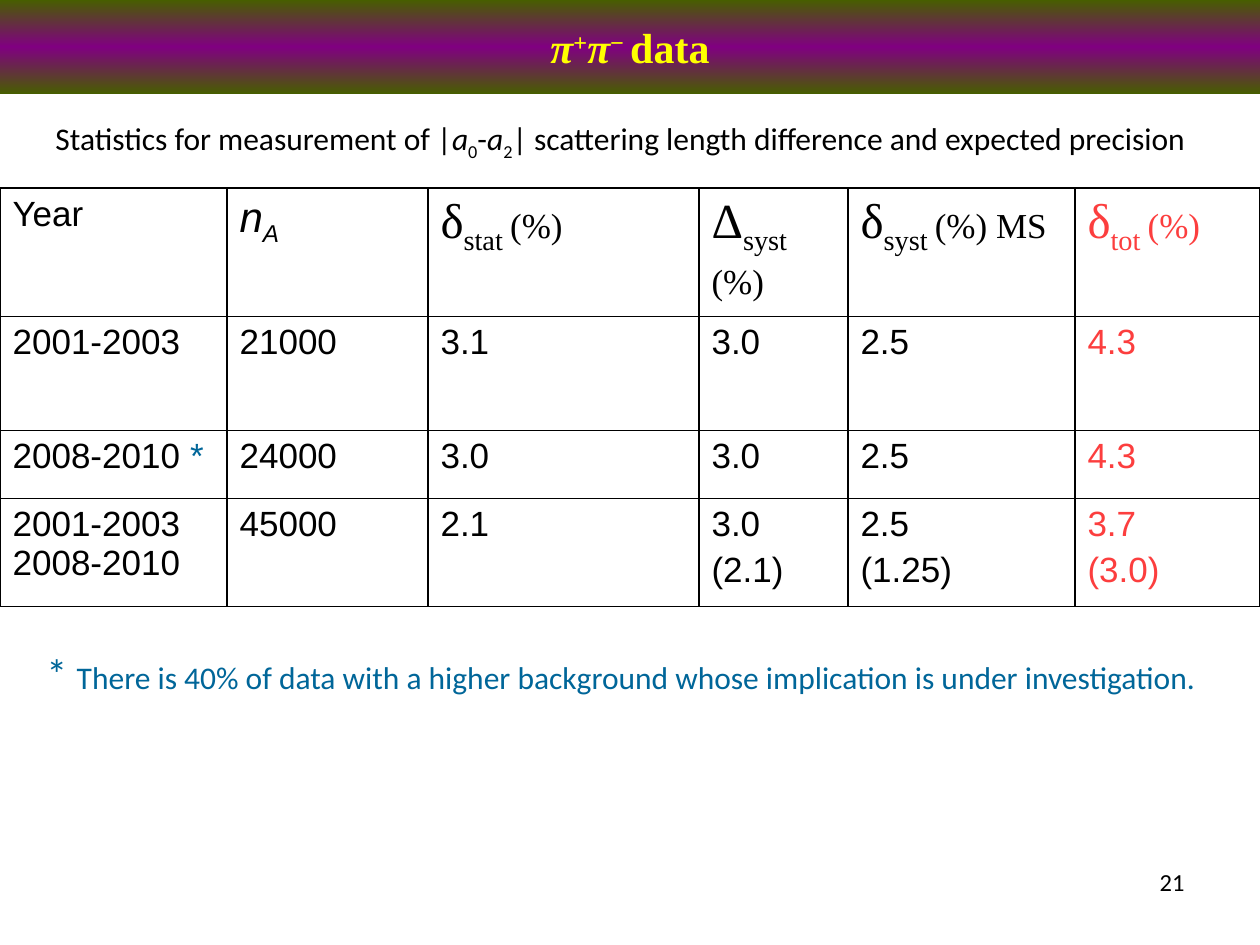
from copy import deepcopy
from pptx import Presentation
from pptx.dml.color import RGBColor
from pptx.enum.text import MSO_ANCHOR, MSO_AUTO_SIZE, PP_ALIGN
from pptx.oxml import parse_xml
from pptx.oxml.ns import nsdecls, qn
from pptx.util import Inches, Pt

LEFT, CENTER, RIGHT = PP_ALIGN.LEFT, PP_ALIGN.CENTER, PP_ALIGN.RIGHT
MIDDLE, FIXED = MSO_ANCHOR.MIDDLE, MSO_AUTO_SIZE.NONE
SCALE = Inches(1) / 126
SANS, SERIF, BODY = "Arial", "Times New Roman", "Calibri"
BLACK, RED, BLUE, YELLOW = "000000", "FC3E3E", "006699", "FFFF00"
GREEN, PURPLE = "475E00", "800080"
SUB, SUP = {"base": -25}, {"base": 30}
ITALIC = {"italic": True}
EDGES = ("lnL", "lnR", "lnT", "lnB")


def px(size):
    return round(size * SCALE)


def color(code):
    return RGBColor.from_string(code)


class Deck:
    def __init__(self, width, height):
        self.file = Presentation()
        self.file.slide_width = px(width)
        self.file.slide_height = px(height)
        self.slide = self.file.slides.add_slide(self.file.slide_layouts[5])

    def fill_text(self, frame, lines, align=LEFT, **style):
        for index, line in enumerate(lines):
            para = frame.paragraphs[0] if index == 0 else frame.add_paragraph()
            para.alignment = align
            para.space_before = Pt(4 if index else 0)
            for text, change in line:
                self.add_run(para, text, **{**style, **change})

    def add_run(self, para, text, size, font, tint=BLACK, bold=False,
                italic=False, base=0):
        run = para.add_run()
        run.text = text
        run.font.size, run.font.name = Pt(size), font
        run.font.bold, run.font.italic = bold, italic
        run.font.color.rgb = color(tint)
        if base:
            run.font._element.set("baseline", str(base * 1000))

    def title(self, box, line, tints, **style):
        shape = self.slide.shapes.title
        shape.left, shape.top, shape.width, shape.height = map(px, box)
        shape.fill.gradient()
        shape.fill.gradient_angle = 90
        stops = shape._element.spPr.find(".//" + qn("a:gsLst"))
        stops.append(deepcopy(stops[0]))
        for index, stop in enumerate(shape.fill.gradient_stops):
            stop.position = index / 2
            stop.color.rgb = color(tints[index])
        frame = shape.text_frame
        frame.auto_size, frame.vertical_anchor = FIXED, MIDDLE
        self.fill_text(frame, [line], CENTER, **style)

    def text(self, box, line, align=LEFT, wrap=True, **style):
        frame = self.slide.shapes.add_textbox(*map(px, box)).text_frame
        frame.word_wrap = wrap
        self.fill_text(frame, [line], align, **style)

    def border(self, cell):
        props = cell._tc.get_or_add_tcPr()
        for index, edge in enumerate(EDGES):
            props.insert(index, parse_xml(
                f'<a:{edge} {nsdecls("a")} w="12700"><a:solidFill>'
                f'<a:srgbClr val="{BLACK}"/></a:solidFill></a:{edge}>'))

    def table(self, left, top, widths, heights, rows):
        box = (left, top, sum(widths), sum(heights))
        table = self.slide.shapes.add_table(
            len(rows), len(widths), *map(px, box)).table
        table.first_row = table.horz_banding = False
        for column, width in zip(table.columns, widths):
            column.width = px(width)
        for y, (height, cells) in enumerate(zip(heights, rows)):
            table.rows[y].height = px(height)
            for x, lines in enumerate(cells):
                cell = table.cell(y, x)
                cell.fill.background()
                self.border(cell)
                tint = RED if x == len(widths) - 1 else BLACK
                self.fill_text(cell.text_frame, lines, size=20, font=SANS, tint=tint)


def symbol(sign, label, tail=""):
    big = {"size": 28, "font": SERIF}
    line = [(sign, big), (label, {**big, **SUB})]
    return line + [(tail, {"font": SERIF})] if tail else line


def plain(*lines):
    return [[(line, {})] for line in lines]


def main():
    deck = Deck(1260, 945)
    deck.text((903, 861, 294, 66), [("21", {})], RIGHT, size=14, font=BODY)
    deck.title((0, 0, 1260, 94),
               [("π", ITALIC), ("+", SUP), ("π", ITALIC), ("− ", SUP), ("data", {})],
               (GREEN, PURPLE, GREEN), size=24, font=SERIF, tint=YELLOW, bold=True)
    deck.text((25, 113, 1191, 50),
              [("Statistics for measurement of |", {}), ("a", ITALIC), ("0", SUB),
               ("-", {}), ("a", ITALIC), ("2", SUB),
               ("| scattering length difference and expected precision", {})],
              CENTER, size=18, font=BODY)
    name = {"size": 24, "italic": True}
    head = [plain("Year"),
            [[("n", name), ("A", {**name, **SUB})]],
            [symbol("δ", "stat ", "(%)")],
            [symbol("Δ", "syst"), [("(%)", {"font": SERIF})]],
            [symbol("δ", "syst ", "(%) MS")],
            [symbol("δ", "tot ", "(%)")]]
    first = [plain(value) for value in
             ("2001-2003", "21000", "3.1", "3.0", "2.5", "4.3")]
    second = [[[("2008-2010 ", {}), ("*", {"tint": BLUE})]]] + [
        plain(value) for value in ("24000", "3.0", "3.0", "2.5", "4.3")]
    total = [plain("2001-2003 2008-2010"), plain("45000"), plain("2.1"),
             plain("3.0", "(2.1)"), plain("2.5", "(1.25)"), plain("3.7", "(3.0)")]
    deck.table(0, 188, (227, 201, 271, 149, 227, 185), (128, 114, 68, 108),
               [head, first, second, total])
    deck.text((34, 641, 1197, 63),
              [("* ", {"size": 24}),
               ("There is 40% of data with a higher background whose "
                "implication is under investigation.", {})],
              wrap=False, size=18, font=BODY, tint=BLUE)
    deck.file.save("out.pptx")


if __name__ == "__main__":
    main()
